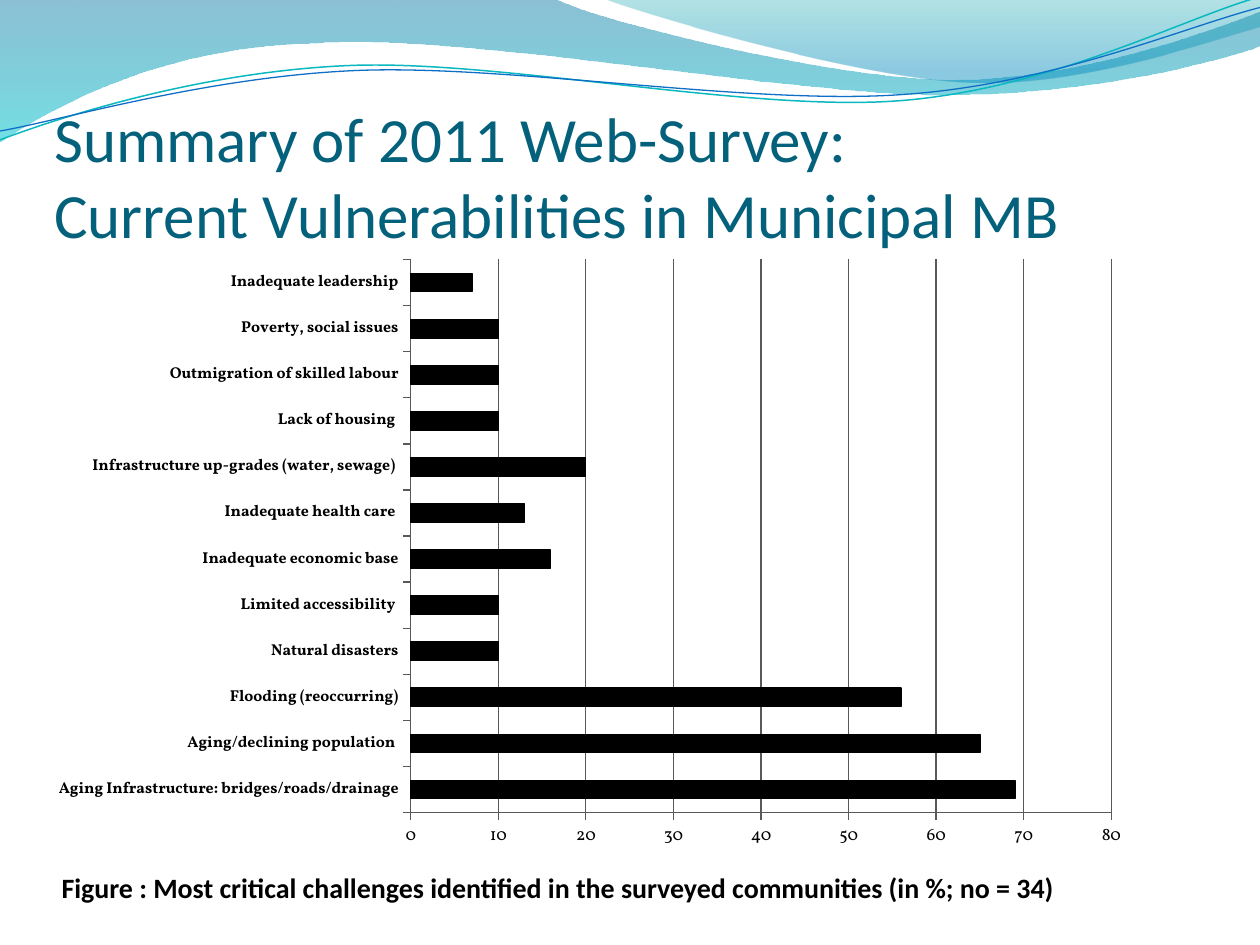
"""Build a survey slide with a wave header, a bar chart and a caption."""
from math import cos, radians, sin
from lxml import etree
from pptx import Presentation
from pptx.chart.data import CategoryChartData
from pptx.dml.color import RGBColor
from pptx.enum.chart import XL_CHART_TYPE, XL_TICK_MARK
from pptx.enum.text import MSO_ANCHOR
from pptx.oxml import parse_xml
from pptx.oxml.ns import nsdecls, qn
from pptx.util import Inches, Pt

BAR_CLUSTERED = XL_CHART_TYPE.BAR_CLUSTERED
OUTSIDE = XL_TICK_MARK.OUTSIDE
MIDDLE, BOTTOM = MSO_ANCHOR.MIDDLE, MSO_ANCHOR.BOTTOM
COLORS = {name: RGBColor.from_string(value) for name, value in {
    "title": "04617B", "black": "000000", "axis": "595959",
    "deep": "0074A1", "aqua": "00C6CF", "teal": "00A1A9", "sky": "008BBF",
    "teal_line": "0AB8BF", "blue_line": "0F6FC6"}.items()}
STRAND_TILT = 2.7


def add_wave(shapes, start, segments, closed):
    """Draw a path of lines (one point) and cubic curves (three points)."""
    points = [(Inches(x), Inches(y)) for segment in segments for x, y in segment]
    builder = shapes.build_freeform(Inches(start[0]), Inches(start[1]))
    builder.add_line_segments(points, close=closed)
    shape = builder.convert_to_shape()
    shape.shadow.inherit = False
    lines = iter(list(shape.element.spPr.iter(qn("a:lnTo"))))
    for segment in segments:
        group = [next(lines) for point in segment]
        if len(group) == 3:
            curve = etree.Element(qn("a:cubicBezTo"))
            group[0].addprevious(curve)
            for line in group:
                curve.append(line[0])
                line.getparent().remove(line)
    return shape


def add_text(slide, box, text, size, color, bold, anchor, margin, wrap):
    """Add a text box with one paragraph."""
    shape = slide.shapes.add_textbox(*map(Inches, box))
    frame = shape.text_frame
    frame.word_wrap = wrap
    frame.vertical_anchor = anchor
    frame.margin_left = frame.margin_right = Inches(margin)
    frame.margin_bottom = Inches(margin / 2)
    paragraph = frame.paragraphs[0]
    paragraph.text = text
    font = paragraph.font
    font.name, font.size, font.bold = "Calibri", Pt(size), bold
    font.color.rgb = COLORS[color]


presentation = Presentation()
presentation.slide_width, presentation.slide_height = Inches(10), Inches(7.5)
slide = presentation.slides.add_slide(presentation.slide_layouts[6])

bands = [
    ((0, 0),
     [[(4.4, -0.01)], [(4.76, 0.17), (6.64, 0.63), (7.58, 0.63)],
      [(8.53, 0.63), (9.58, 0.26), (10, 0.09)], [(10.01, 0.36)],
      [(9.83, 0.44), (8.7, 0.76), (7.46, 0.75)],
      [(6.22, 0.75), (3.82, 0.28), (2.57, 0.34)],
      [(1.29, 0.36), (0.46, 0.83), (-0.01, 1.13)], [(0, 0)]],
     [(0, "deep", 45), (1, "aqua", 55)]),
    ((4.79, -0.01),
     [[(5.09, 0.11), (6.82, 0.62), (7.69, 0.65)],
      [(8.56, 0.69), (9.61, 0.32), (10, 0.21)], [(10, 0)], [(4.79, -0.01)]],
     [(0, "teal", 30), (0.8, "sky", 45)]),
]
for start, segments, stops in bands:
    band = add_wave(slide.shapes, start, segments, True)
    band.line.fill.background()
    band.fill.gradient()
    band.fill.gradient_angle = 270
    for stop, (position, color, opacity) in zip(band.fill.gradient_stops, stops):
        stop.position = position
        stop.color.rgb = COLORS[color]
    fill_colors = band.element.spPr.iter(qn("a:srgbClr"))
    for element, (position, color, opacity) in zip(list(fill_colors), stops):
        etree.SubElement(element, qn("a:alpha"), val=str(opacity * 1000))

strands = [
    ((0, 1.11),
     [[(0.48, 0.93), (1.58, 0.57), (2.77, 0.52)],
      [(3.95, 0.47), (5.93, 0.89), (7.13, 0.8)],
      [(8.33, 0.71), (9.38, 0.15), (9.98, -0.02)]], "teal_line", 0.85, (4.99, 0.575)),
    ((0, 1.04),
     [[(0.47, 0.96), (1.64, 0.61), (2.83, 0.56)],
      [(4.03, 0.51), (5.97, 0.84), (7.17, 0.75)],
      [(8.36, 0.67), (9.41, 0.21), (10, 0.06)]], "blue_line", 0.75, (5, 0.59)),
]
strand_group = slide.shapes.add_group_shape()
cosine, sine = cos(radians(STRAND_TILT)), sin(radians(STRAND_TILT))
for start, segments, color, width, (center_x, center_y) in strands:
    start, *level = [[(center_x + (x - center_x) * cosine - (y - center_y) * sine,
                       center_y + (x - center_x) * sine + (y - center_y) * cosine)
                      for x, y in segment] for segment in [[start], *segments]]
    strand = add_wave(strand_group.shapes, start[0], level, False)
    strand.rotation = 360 - STRAND_TILT
    strand.fill.background()
    strand.line.color.rgb = COLORS[color]
    strand.line.width = Pt(width)

add_text(slide, (0.43, 0.68, 9, 1.31),
         "Summary of 2011 Web-Survey: \vCurrent Vulnerabilities in Municipal MB",
         36, "title", False, BOTTOM, 0, True)

challenges = [
    ("Aging Infrastructure: bridges/roads/drainage", 69),
    ("Aging/declining population ", 65),
    ("Flooding (reoccurring)", 56),
    ("Natural disasters", 10),
    ("Limited accessibility ", 10),
    ("Inadequate economic base", 16),
    ("Inadequate health care ", 13),
    ("Infrastructure up-grades (water, sewage) ", 20),
    ("Lack of housing ", 10),
    ("Outmigration of skilled labour", 10),
    ("Poverty, social issues", 10),
    ("Inadequate leadership", 7),
]
chart_data = CategoryChartData()
chart_data.categories = [name for name, share in challenges]
chart_data.add_series("Series 1", [share for name, share in challenges])
chart_width, chart_height = 8.77, 4.87
chart = slide.shapes.add_chart(BAR_CLUSTERED, Inches(0.3), Inches(1.97),
                               Inches(chart_width), Inches(chart_height),
                               chart_data).chart
chart.has_legend = chart.has_title = False
chart.font.name, chart.font.size = "Vollkorn", Pt(10)
chart.font.color.rgb = COLORS["black"]

plot = chart.plots[0]
plot.gap_width = 150
plot.vary_by_categories = False
bars = plot.series[0].format
bars.fill.solid()
bars.fill.fore_color.rgb = bars.line.color.rgb = COLORS["black"]
bars.line.width = Pt(0.75)

category_axis, value_axis = chart.category_axis, chart.value_axis
category_axis.tick_labels.font.size = Pt(9)
category_axis.tick_labels.font.bold = True
value_axis.minimum_scale, value_axis.maximum_scale = 0, 80
value_axis.major_unit = 10
value_axis.has_major_gridlines = True
value_axis.tick_labels.number_format = "0"
value_axis.tick_labels.number_format_is_linked = False
for axis in (category_axis, value_axis):
    axis.major_tick_mark = OUTSIDE
for item in (category_axis, value_axis, value_axis.major_gridlines):
    item.format.line.color.rgb = COLORS["axis"]
    item.format.line.width = Pt(0.75)

plot_area = chart.element.find(".//" + qn("c:plotArea"))
for old_layout in plot_area.findall(qn("c:layout")):
    plot_area.remove(old_layout)
frame = {"x": 2.96 / chart_width, "y": 0.09 / chart_height,
         "w": 5.56 / chart_width, "h": 4.39 / chart_height}
modes = '<c:xMode val="edge"/><c:yMode val="edge"/>'
sizes = "".join(f'<c:{key} val="{value}"/>' for key, value in frame.items())
plot_area.insert(0, parse_xml(
    f'<c:layout {nsdecls("c")}><c:manualLayout><c:layoutTarget val="inner"/>'
    f'{modes}{sizes}</c:manualLayout></c:layout>'))

add_text(slide, (0.39, 6.86, 8.37, 0.37),
         "Figure : Most critical challenges identified in the surveyed communities (in %; no = 34)",
         16, "black", True, MIDDLE, 0.1, False)

presentation.save("out.pptx")
